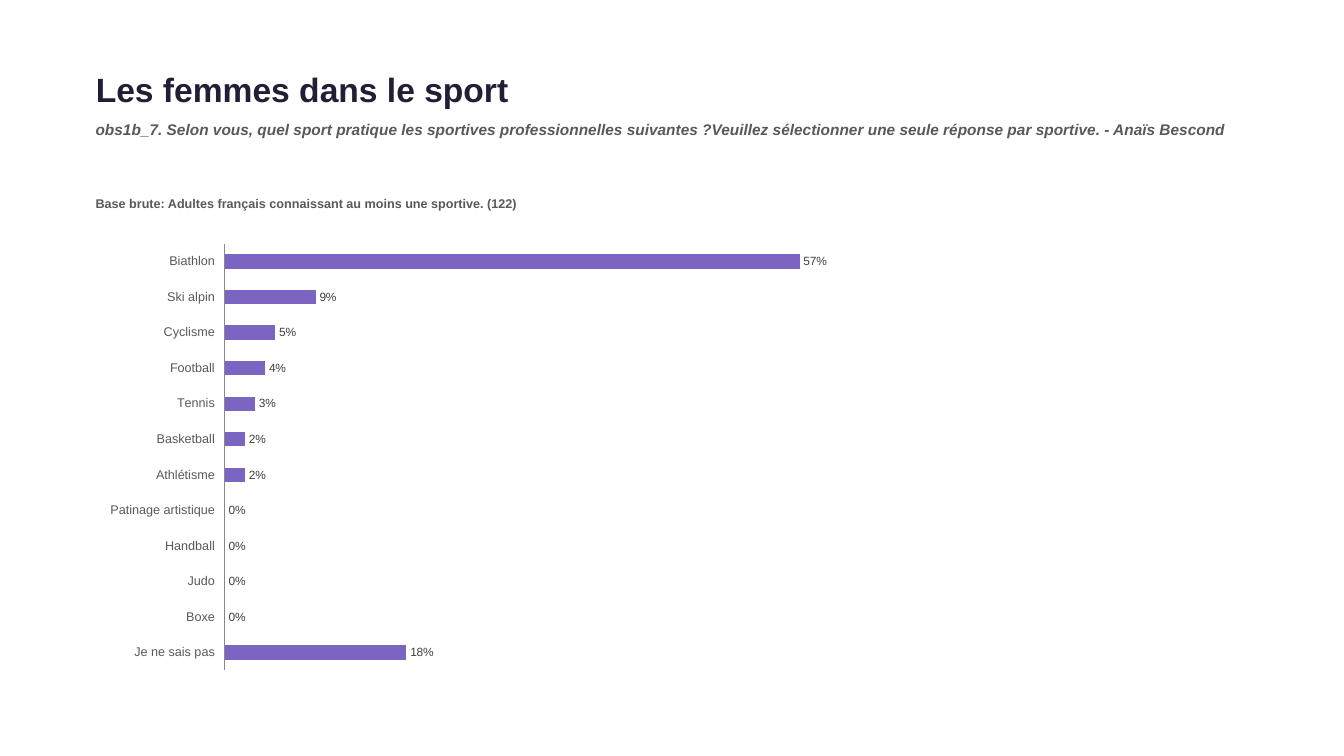
from lxml import etree
from pptx import Presentation
from pptx.chart import data as cd
from pptx.dml.color import RGBColor
from pptx.enum import chart as ch, text as tx
from pptx.oxml import ns
from pptx.util import Pt

NAVY = RGBColor(0x24, 0x1D, 0x36)
GREY = RGBColor(0x59, 0x59, 0x59)
DARK = RGBColor(0x40, 0x40, 0x40)
RULE = RGBColor(0x89, 0x89, 0x89)
LILAC = RGBColor(0x7C, 0x64, 0xC3)
FACE = "Arial"

SPORTS = {
    "Je ne sais pas": 0.18, "Boxe": 0, "Judo": 0, "Handball": 0,
    "Patinage artistique": 0, "Athlétisme": 0.02, "Basketball": 0.02,
    "Tennis": 0.03, "Football": 0.04, "Cyclisme": 0.05,
    "Ski alpin": 0.09, "Biathlon": 0.57,
}


def style(font, size, color, bold=False, italic=False):
    """Set face, size, colour and weight of a font."""
    font.name, font.size = FACE, Pt(size)
    font.bold, font.italic = bold, italic
    font.color.rgb = color


def write(shape, words, anchor=tx.MSO_ANCHOR.TOP, **form):
    """Fill a shape with one left-aligned paragraph."""
    frame = shape.text_frame
    frame.word_wrap = True
    frame.auto_size = tx.MSO_AUTO_SIZE.NONE
    frame.vertical_anchor = anchor
    para = frame.paragraphs[0]
    para.alignment = tx.PP_ALIGN.LEFT
    run = para.add_run()
    run.text = words
    style(run.font, **form)


def head(slide, left, top, width):
    """Place the title, the question and the sample base."""
    title = slide.shapes.title
    title.left, title.top = Pt(left), Pt(top)
    title.width, title.height = Pt(width), Pt(36)
    write(title, "Les femmes dans le sport", tx.MSO_ANCHOR.MIDDLE,
          size=24, color=NAVY, bold=True)
    ask = slide.shapes.add_textbox(Pt(left), Pt(top + 36.7), Pt(width), Pt(54))
    write(ask, "obs1b_7. Selon vous, quel sport pratique les sportives "
          "professionnelles suivantes ?Veuillez sélectionner une seule "
          "réponse par sportive. - Anaïs Bescond",
          size=11, color=GREY, bold=True, italic=True)
    base = slide.shapes.add_textbox(Pt(left), Pt(top + 90.7), Pt(width), Pt(31.7))
    write(base, "Base brute: Adultes français connaissant au moins une "
          "sportive. (122)", size=9, color=GREY, bold=True)


def fix_plot(chart, **box):
    """Pin the inner plot area to fractions of the chart."""
    area = chart._chartSpace.chart.plotArea
    for old in area.findall(ns.qn("c:layout")):
        area.remove(old)
    layout = etree.Element(ns.qn("c:layout"))
    manual = etree.SubElement(layout, ns.qn("c:manualLayout"))
    marks = {"layoutTarget": "inner", "xMode": "edge", "yMode": "edge", **box}
    for tag, val in marks.items():
        etree.SubElement(manual, ns.qn(f"c:{tag}")).set("val", str(val))
    area.insert(0, layout)


def bars(slide, left, top, width, height):
    """Draw the bar chart of answers by sport."""
    data = cd.CategoryChartData(number_format="0%")
    data.categories = list(SPORTS)
    data.add_series("Series 1", list(SPORTS.values()))
    chart = slide.shapes.add_chart(
        ch.XL_CHART_TYPE.BAR_CLUSTERED, Pt(left), Pt(top), Pt(width),
        Pt(height), data).chart
    chart.has_legend = chart.has_title = False
    style(chart.font, 9, GREY)
    fix_plot(chart, x=0.12, y=0.02, w=0.87, h=0.96)

    cats, vals = chart.category_axis, chart.value_axis
    cats.major_tick_mark = cats.minor_tick_mark = ch.XL_TICK_MARK.NONE
    cats.tick_label_position = ch.XL_TICK_LABEL_POSITION.LOW
    cats.has_major_gridlines = False
    cats.format.line.color.rgb = RULE
    cats.format.line.width = Pt(0.75)
    style(cats.tick_labels.font, 9, GREY)
    vals.minimum_scale, vals.maximum_scale, vals.major_unit = 0, 1, 0.1
    vals.has_major_gridlines = vals.visible = False

    plot = chart.plots[0]
    plot.gap_width, plot.overlap = 150, -10
    plot.vary_by_categories = False
    fill = plot.series[0].format.fill
    fill.solid()
    fill.fore_color.rgb = LILAC
    tags = plot.series[0].data_labels
    tags.show_value = True
    tags.position = ch.XL_LABEL_POSITION.OUTSIDE_END
    tags.number_format, tags.number_format_is_linked = "0%", False
    style(tags.font, 8.5, DARK)


def main():
    """Build the slide and save it."""
    deck = Presentation()
    deck.slide_width, deck.slide_height = Pt(960), Pt(540)
    slide = deck.slides.add_slide(deck.slide_layouts[5])
    head(slide, 61.2, 45.4, 837.4)
    bars(slide, 61.2, 167.8, 828, 317.5)
    deck.save("out.pptx")


if __name__ == "__main__":
    main()
